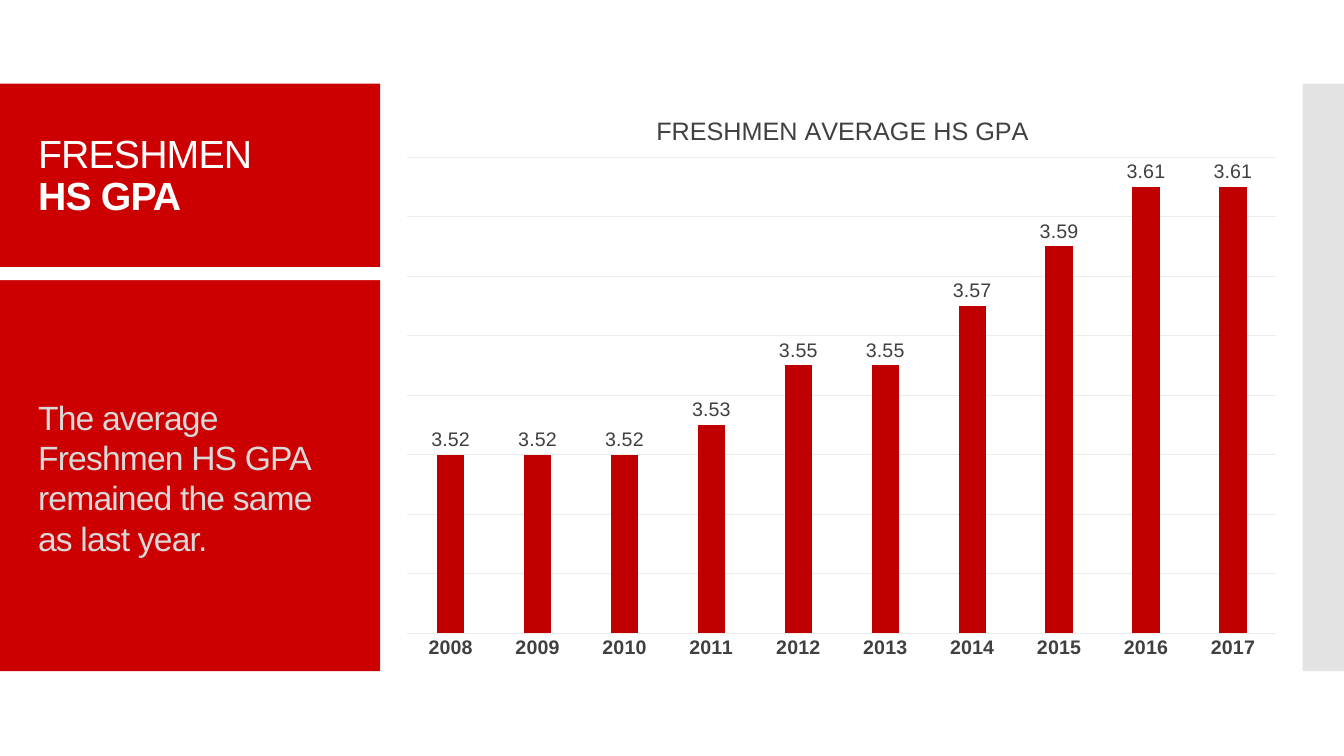
from pptx import Presentation
from pptx.chart.data import CategoryChartData
from pptx.dml.color import RGBColor
from pptx.enum.chart import XL_CHART_TYPE, XL_LABEL_POSITION, XL_TICK_MARK
from pptx.enum.shapes import MSO_SHAPE
from pptx.enum.text import MSO_ANCHOR
from pptx.oxml import parse_xml
from pptx.oxml.ns import nsdecls, qn
from pptx.util import Inches, Pt

COLUMN = XL_CHART_TYPE.COLUMN_CLUSTERED
OUTSIDE = XL_LABEL_POSITION.OUTSIDE_END
NO_TICK = XL_TICK_MARK.NONE
RECT = MSO_SHAPE.RECTANGLE
MIDDLE = MSO_ANCHOR.MIDDLE
FACE = "Arial"
RED, WHITE, DARK, RULE = "CC0000", "FFFFFF", "404040", "ECECEC"
YEARS = [str(year) for year in range(2008, 2018)]
GRADES = [3.52, 3.52, 3.52, 3.53, 3.55, 3.55, 3.57, 3.59, 3.61, 3.61]


def tint(target, shade):
    target.rgb = RGBColor.from_string(shade)


def style(font, size, shade, bold=False):
    font.name = FACE
    font.size = Pt(size)
    font.bold = bold
    tint(font.color, shade)


def add_block(slide, box, shade, alpha=None):
    block = slide.shapes.add_shape(RECT, *map(Inches, box))
    block.shadow.inherit = False
    block.line.fill.background()
    block.fill.solid()
    tint(block.fill.fore_color, shade)
    if alpha is not None:
        node = block.fill._xPr.find(qn("a:solidFill"))[0]
        node.append(parse_xml(f'<a:alpha {nsdecls("a")} val="{alpha * 1000}"/>'))


def add_text(slide, box, text, size, shade, space=None):
    frame = slide.shapes.add_textbox(*map(Inches, box)).text_frame
    frame.word_wrap = True
    frame.vertical_anchor = MIDDLE
    frame.text = text
    para = frame.paragraphs[0]
    para.line_spacing = space
    for index, run in enumerate(para.runs):
        style(run.font, size, shade, index > 0)
        run._r.get_or_add_rPr().set("spc", "-60")


def place(parent, index, inner=False, **sides):
    for old in parent.findall(qn("c:layout")):
        parent.remove(old)
    target = '<c:layoutTarget val="inner"/>' if inner else ""
    modes = "".join(f'<c:{side}Mode val="edge"/>' for side in "xy")
    spots = "".join(f'<c:{side} val="{val}"/>' for side, val in sides.items())
    parent.insert(index, parse_xml(
        f'<c:layout {nsdecls("c")}><c:manualLayout>{target}{modes}{spots}'
        "</c:manualLayout></c:layout>"))


def draw_rule(line):
    line.width = Pt(0.75)
    tint(line.color, RULE)


def add_graph(slide, box):
    data = CategoryChartData()
    data.categories = YEARS
    data.add_series("Series 1", GRADES)
    chart = slide.shapes.add_chart(COLUMN, *map(Inches, box), data).chart
    style(chart.font, 10, "7F7F7F")
    chart.has_legend = False

    title = chart.chart_title
    title.text_frame.text = "FRESHMEN AVERAGE HS GPA"
    style(title.text_frame.paragraphs[0].runs[0].font, 18, DARK)
    place(title._element, 1, x=0.29, y=0.04)
    place(chart._chartSpace.chart.plotArea, 0, True, x=0.02, y=0.12, w=0.96, h=0.81)

    years = chart.category_axis
    years.major_tick_mark = NO_TICK
    style(years.tick_labels.font, 14, DARK, True)
    draw_rule(years.format.line)

    scale = chart.value_axis
    scale.minimum_scale, scale.maximum_scale = 3.46, 3.62
    scale.major_unit = 0.02
    scale.has_major_gridlines = True
    draw_rule(scale.major_gridlines.format.line)
    scale.visible = False

    plot = chart.plots[0]
    plot.gap_width, plot.overlap = 219, -27
    plot.vary_by_categories = False
    bars = plot.series[0]
    bars.format.fill.solid()
    tint(bars.format.fill.fore_color, "C00000")
    labels = bars.data_labels
    labels.show_value = True
    labels.position = OUTSIDE
    style(labels.font, 14, DARK)


def main():
    deck = Presentation()
    deck.slide_width, deck.slide_height = Inches(13.33), Inches(7.5)
    slide = deck.slides.add_slide(deck.slide_layouts[6])
    add_block(slide, (0, 0.83, 3.77, 5.83), RED)
    add_block(slide, (12.92, 0.83, 0.41, 5.83), "C8C8C8", 50)
    add_text(slide, (0.28, 0.86, 3.48, 1.79), "FRESHMEN\vHS GPA", 28, WHITE, 0.9)
    add_text(slide, (0.28, 2.78, 3.22, 3.91),
             "The average Freshmen HS GPA remained the same as last year.",
             24, "D9D9D9")
    add_block(slide, (0, 2.65, 3.86, 0.13), WHITE)
    add_graph(slide, (3.86, 0.86, 8.98, 5.83))
    deck.save("out.pptx")


if __name__ == "__main__":
    main()
